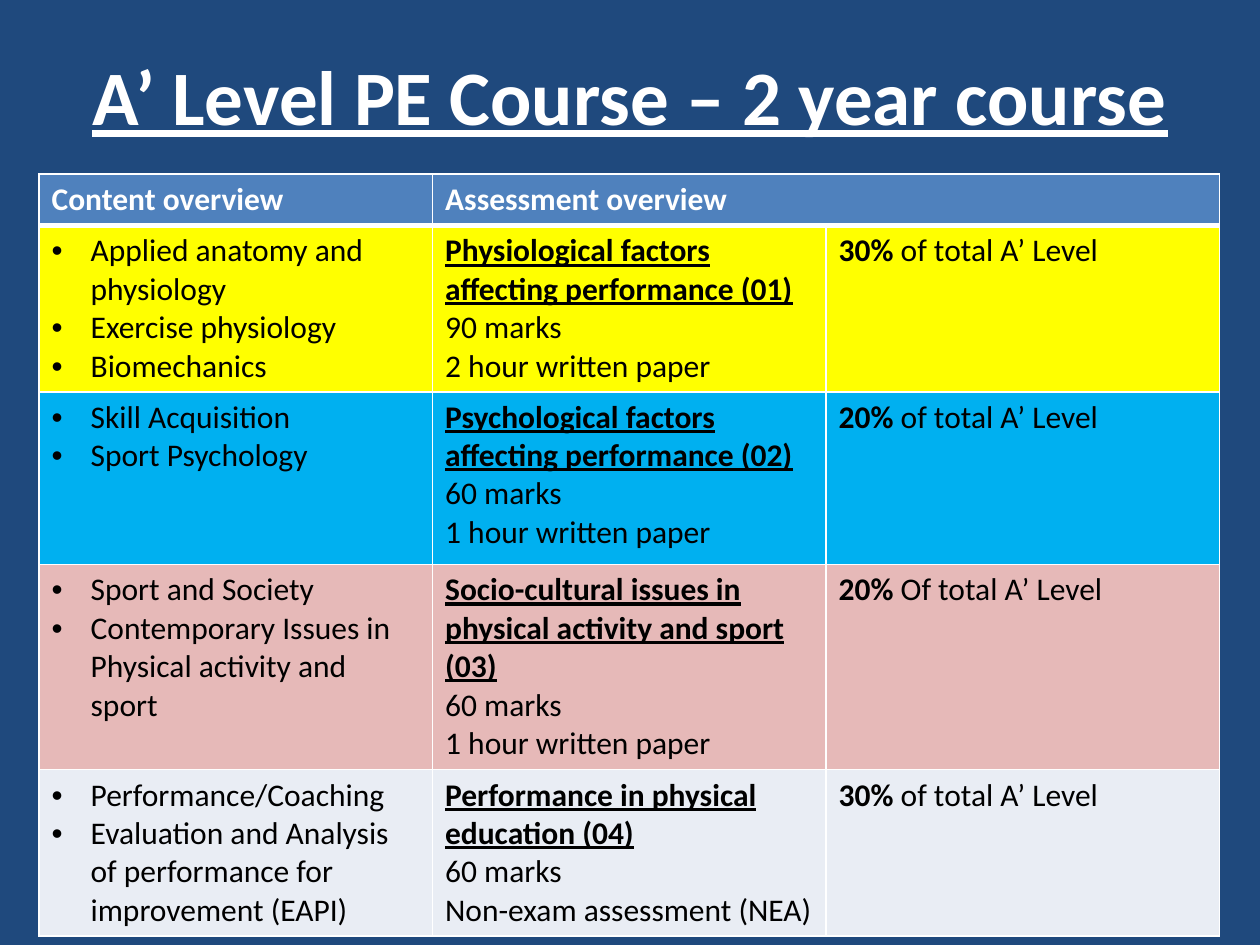
from dataclasses import dataclass

from lxml import etree
from pptx import Presentation
from pptx.dml.color import RGBColor
from pptx.enum.text import MSO_ANCHOR, PP_ALIGN
from pptx.oxml.ns import qn
from pptx.util import Inches, Pt

MIDDLE = MSO_ANCHOR.MIDDLE
CENTER = PP_ALIGN.CENTER
NAVY = RGBColor(0x1F, 0x49, 0x7D)
BLUE = RGBColor(0x4F, 0x81, 0xBD)
YELLOW = RGBColor(0xFF, 0xFF, 0x00)
SKY = RGBColor(0x00, 0xB0, 0xF0)
PINK = RGBColor(0xE6, 0xB9, 0xB8)
PALE = RGBColor(0xE9, 0xED, 0xF4)
WHITE = RGBColor(0xFF, 0xFF, 0xFF)
BLACK = RGBColor(0x00, 0x00, 0x00)

TITLE = {"name": "Calibri", "size": Pt(44), "bold": True, "underline": True}
PLAIN = {"name": "Calibri", "size": Pt(18), "bold": False}
STRONG = PLAIN | {"bold": True}
PAPER = STRONG | {"underline": True}

WIDTH = 9.37
INDENT = Inches(0.31)


@dataclass
class Unit:
    fill: RGBColor
    height: float
    topics: list[str]
    paper: str
    marks: str
    method: str
    share: str
    rest: str = " of total A’ Level"


UNITS = [
    Unit(YELLOW, 1.32,
         ["Applied anatomy and physiology", "Exercise physiology", "Biomechanics"],
         "Physiological factors affecting performance (01)",
         "90 marks", "2 hour written paper", "30%"),
    Unit(SKY, 1.37, ["Skill Acquisition", "Sport Psychology"],
         "Psychological factors affecting performance (02)",
         "60 marks", "1 hour written paper", "20%"),
    Unit(PINK, 1.63,
         ["Sport and Society", "Contemporary Issues in Physical activity and sport"],
         "Socio-cultural issues in physical activity and sport (03)",
         "60 marks", "1 hour written paper", "20%", " Of total A’ Level"),
    Unit(PALE, 1.32,
         ["Performance/Coaching",
          "Evaluation and Analysis of performance for improvement (EAPI)"],
         "Performance in physical education (04)",
         "60 marks", "Non-exam assessment (NEA)", "30%"),
]


def add_run(para, text: str, style: dict, color: RGBColor = BLACK) -> None:
    run = para.add_run()
    run.text = text
    for key, value in style.items():
        setattr(run.font, key, value)
    run.font.color.rgb = color


def add_bullet(para) -> None:
    props = para._p.get_or_add_pPr()
    props.set("marL", str(INDENT))
    props.set("indent", str(-INDENT))
    etree.SubElement(props, qn("a:buFont"), typeface="Arial")
    etree.SubElement(props, qn("a:buChar"), char="•")


def fill_lines(cell, lines: list[tuple], color: RGBColor = BLACK,
               bullet: bool = False) -> None:
    frame = cell.text_frame
    for i, (text, style) in enumerate(lines):
        para = frame.add_paragraph() if i else frame.paragraphs[0]
        if bullet:
            add_bullet(para)
        add_run(para, text, style, color)


def paint_cell(cell, fill: RGBColor, top: int = 1, bottom: int = 1) -> None:
    props = cell._tc.get_or_add_tcPr()
    for side, width in {"L": 1, "R": 1, "T": top, "B": bottom}.items():
        line = etree.SubElement(props, qn(f"a:ln{side}"), w=str(Pt(width)))
        solid = etree.SubElement(line, qn("a:solidFill"))
        etree.SubElement(solid, qn("a:srgbClr"), val=str(WHITE))
    cell.fill.solid()
    cell.fill.fore_color.rgb = fill


def add_title(slide) -> None:
    box = slide.shapes.add_textbox(Inches(0.5), Inches(0.13), Inches(9), Inches(1.25))
    frame = box.text_frame
    frame.word_wrap = True
    frame.vertical_anchor = MIDDLE
    para = frame.paragraphs[0]
    para.alignment = CENTER
    add_run(para, "A’ Level PE Course – 2 year course", TITLE, WHITE)


def add_grid(slide) -> None:
    sizes = [0.41] + [unit.height for unit in UNITS]
    table = slide.shapes.add_table(
        len(sizes), 3, Inches(0.31), Inches(1.38), Inches(WIDTH), Inches(sum(sizes))
    ).table
    for col in table.columns:
        col.width = Inches(WIDTH / 3)
    for row, size in zip(table.rows, sizes):
        row.height = Inches(size)

    for cell in table.rows[0].cells:
        paint_cell(cell, BLUE, bottom=3)
    table.cell(0, 1).merge(table.cell(0, 2))
    for col, text in enumerate(["Content overview", "Assessment overview"]):
        fill_lines(table.cell(0, col), [(text, STRONG)], WHITE)

    for i, unit in enumerate(UNITS, 1):
        cells = [table.cell(i, col) for col in range(3)]
        for cell in cells:
            paint_cell(cell, unit.fill, top=3 if i == 1 else 1)
        fill_lines(cells[0], [(text, PLAIN) for text in unit.topics], bullet=True)
        fill_lines(cells[1], [(unit.paper, PAPER), (unit.marks, PLAIN),
                              (unit.method, PLAIN)])
        fill_lines(cells[2], [(unit.share, STRONG)])
        add_run(cells[2].text_frame.paragraphs[0], unit.rest, PLAIN)


def main() -> None:
    deck = Presentation()
    deck.slide_width, deck.slide_height = Inches(10), Inches(7.5)
    slide = deck.slides.add_slide(deck.slide_layouts[6])
    slide.background.fill.solid()
    slide.background.fill.fore_color.rgb = NAVY
    add_title(slide)
    add_grid(slide)
    deck.save("out.pptx")


if __name__ == "__main__":
    main()
